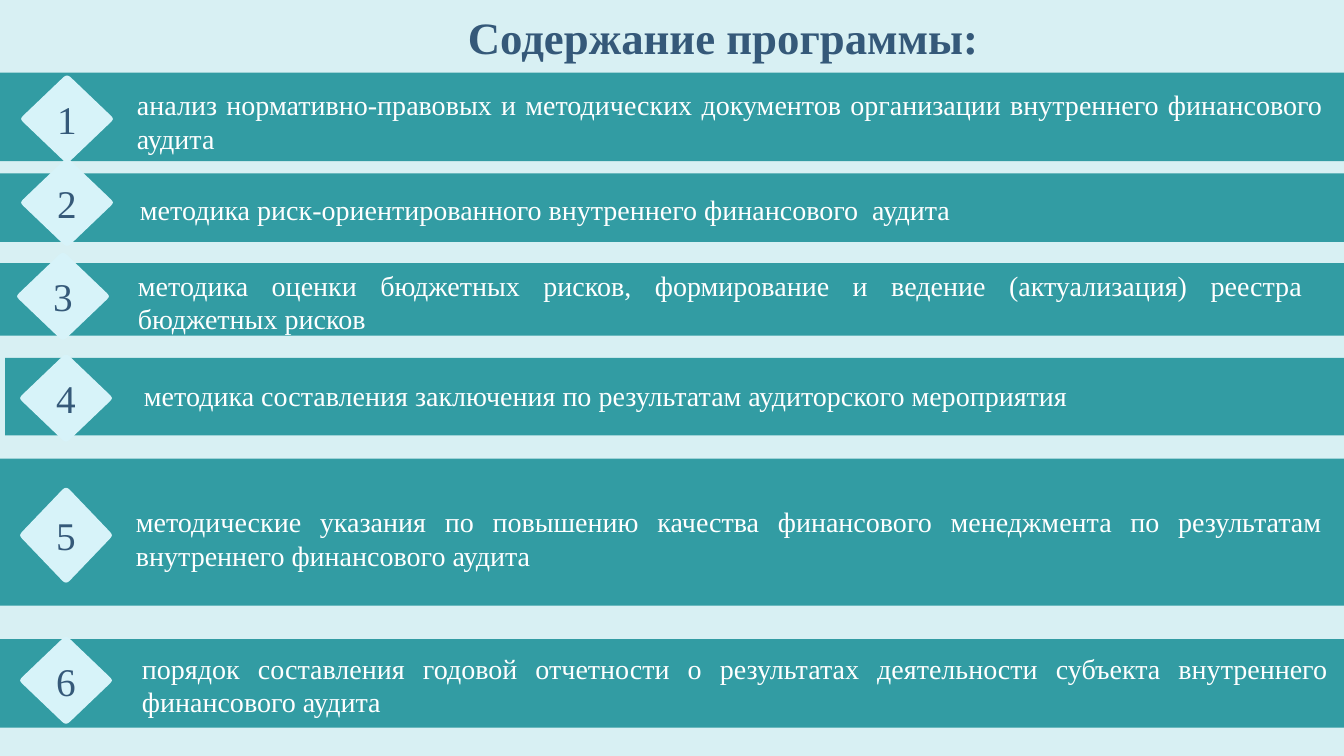
from pptx import Presentation
from pptx.dml.color import RGBColor
from pptx.enum.shapes import MSO_SHAPE as SHAPE
from pptx.enum.text import MSO_ANCHOR as ANCHOR, PP_ALIGN as ALIGN
from pptx.util import Inches, Pt

CELL = Inches(0.1)
COLS, ROWS = 133.3, 75
COLORS = {"back": "D8F0F3", "band": "329CA3", "badge": "D7F3F9",
          "dark": "355979", "light": "FFFFFF"}
FONT = "Times New Roman"
BADGE_COLS = 9.1
CORNER = [(0.5, 0), (0.52, 0.005), (0.54, 0.02), (0.98, 0.465), (0.995, 0.485), (1, 0.5)]

# Each item: text, alignment, band box, badge (left, top, height), text box
ITEMS = [
    ("анализ нормативно-правовых и методических документов организации внутреннего финансового аудита",
     ALIGN.JUSTIFY, (-0.1, 7.2, 133.4, 8.8), (2.1, 7.5, 8.6), (12.6, 8.2, 119.6, 7.7)),
    ("методика риск-ориентированного внутреннего финансового  аудита",
     ALIGN.JUSTIFY, (-0.1, 17.2, 133.7, 6.8), (2.1, 15.8, 8.6), (12.9, 18.6, 119.6, 4.4)),
    ("методика оценки бюджетных рисков, формирование и ведение (актуализация) реестра \vбюджетных рисков",
     ALIGN.JUSTIFY, (0, 26.1, 133.3, 7.2), (1.7, 25.1, 8.6), (12.7, 26.1, 119.8, 7.7)),
    ("методика составления заключения по результатам аудиторского мероприятия",
     ALIGN.LEFT, (0.5, 35.5, 133.2, 7.7), (2, 35.2, 8.6), (13.3, 37.1, 119.6, 4.4)),
    ("методические указания по повышению качества финансового менеджмента по результатам внутреннего финансового аудита",
     ALIGN.JUSTIFY, (0, 45.5, 133.7, 14.6), (2, 48.4, 9.4), (12.5, 49.6, 119.6, 7.7)),
    ("порядок составления годовой отчетности о результатах деятельности субъекта внутреннего финансового аудита",
     ALIGN.JUSTIFY, (0, 63.4, 133.6, 8.8), (2, 63.2, 8.6), (13.1, 64.1, 119.6, 7.7)),
]


def cells(*counts):
    """Turn counts of grid cells into lengths."""
    return [round(n * CELL) for n in counts]


def color(name):
    """Look up a colour by its role."""
    return RGBColor.from_string(COLORS[name])


def write(sp, text, size=20, tint="light", bold=False, align=ALIGN.LEFT, anchor=ANCHOR.TOP):
    """Put one formatted paragraph into a shape."""
    tf = sp.text_frame
    tf.word_wrap = True
    tf.vertical_anchor = anchor
    p = tf.paragraphs[0]
    p.text = text
    p.alignment = align
    for r in p.runs:
        r.font.name, r.font.size, r.font.bold = FONT, Pt(size), bold
        r.font.color.rgb = color(tint)


def paint(sp, tint):
    """Give a shape a flat fill with no line or shadow."""
    sp.shadow.inherit = False
    sp.fill.solid()
    sp.fill.fore_color.rgb = color(tint)
    sp.line.fill.background()


def add_text(s, box, text, **style):
    """Add a text box."""
    write(s.shapes.add_textbox(*cells(*box)), text, **style)


def add_band(s, box):
    """Add a horizontal band."""
    paint(s.shapes.add_shape(SHAPE.RECTANGLE, *cells(*box)), "band")


def add_badge(s, left, top, height, number):
    """Add a numbered diamond with softened corners."""
    right = CORNER + [(x, 1 - y) for x, y in reversed(CORNER)]
    outline = right + [(1 - x, y) for x, y in reversed(right)]
    points = [cells(left + x * BADGE_COLS, top + y * height) for x, y in outline]
    builder = s.shapes.build_freeform(*points[0])
    builder.add_line_segments(points[1:], close=True)
    sp = builder.convert_to_shape()
    paint(sp, "badge")
    write(sp, str(number), size=28, tint="dark", align=ALIGN.CENTER, anchor=ANCHOR.MIDDLE)


def main():
    """Build the programme contents slide."""
    prs = Presentation()
    prs.slide_width, prs.slide_height = cells(COLS, ROWS)
    s = prs.slides.add_slide(prs.slide_layouts[6])
    s.background.fill.solid()
    s.background.fill.fore_color.rgb = color("back")
    add_text(s, (5.6, 0.5, 133.4, 6.4), "Содержание программы: ",
             size=32, tint="dark", bold=True, align=ALIGN.CENTER)
    for number, (text, align, band, badge, box) in enumerate(ITEMS, 1):
        add_band(s, band)
        add_badge(s, *badge, number)
        add_text(s, box, text, align=align)
    prs.save("out.pptx")


if __name__ == "__main__":
    main()
